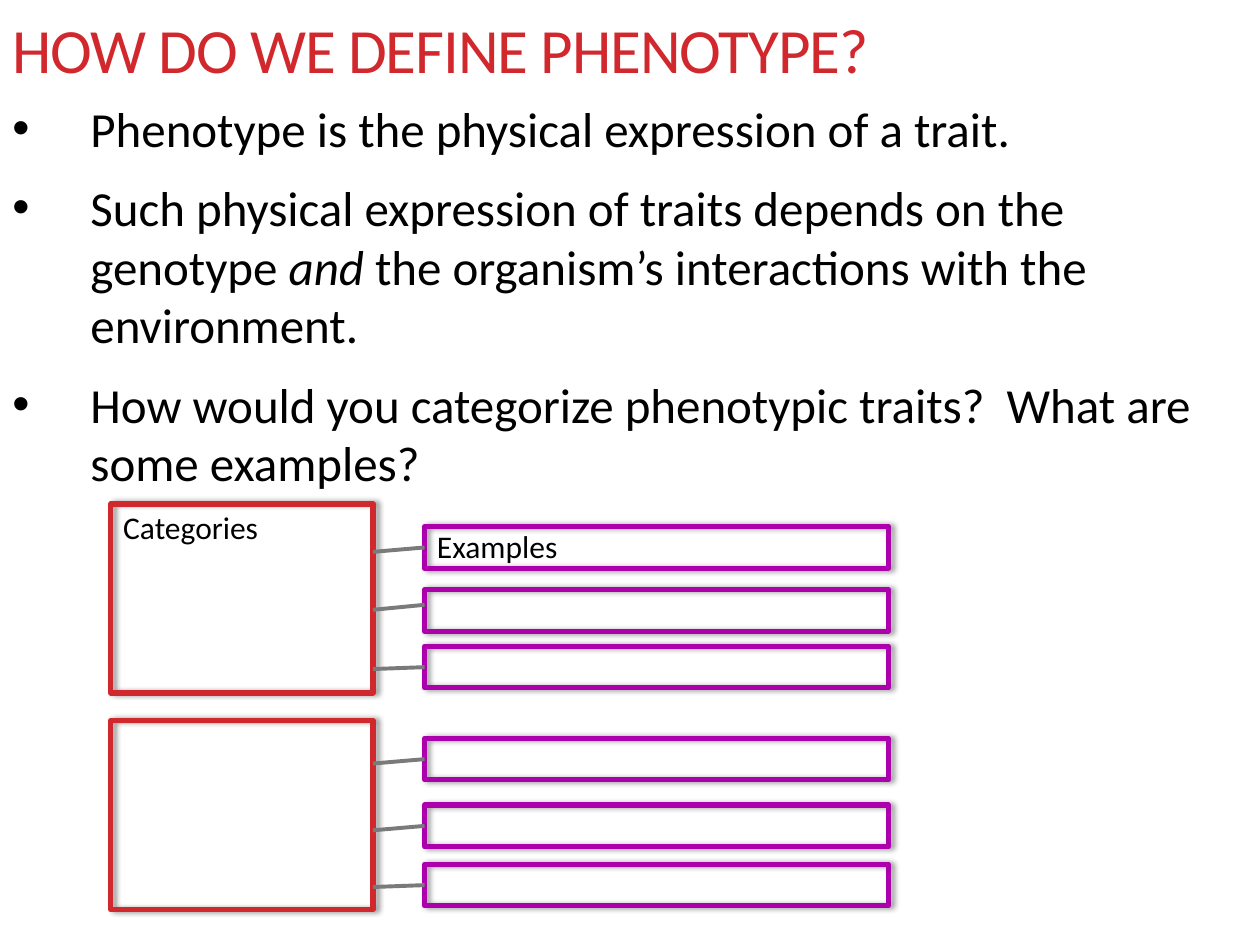
from dataclasses import dataclass

from lxml.etree import SubElement as Sub
from pptx import Presentation
from pptx.dml.color import RGBColor as Rgb
from pptx.enum.shapes import MSO_CONNECTOR as Conn, MSO_SHAPE as Kind
from pptx.enum.text import MSO_ANCHOR as Anchor
from pptx.oxml.ns import qn
from pptx.util import Pt

SCALE = 9144


@dataclass(frozen=True)
class Theme:
    font: str = "Calibri"
    red: str = "D1282E"
    plum: str = "AC00AC"
    gray: str = "7A7A7A"
    black: str = "000000"
    head: int = 36
    body: int = 28
    label: int = 18
    edge: float = 3
    link: float = 2.25


@dataclass(frozen=True)
class Box:
    left: int
    top: int
    width: int
    height: int


@dataclass(frozen=True)
class Row:
    top: int
    start: int
    end: int
    joined: bool = True


THEME = Theme()
GROUPS = [Box(88, top, 208, 150) for top in (400, 572)]
ROWS = [
    Row(418, 438, 435),
    Row(468, 484, 480, False),
    Row(513, 531, 528),
    Row(586, 606, 602),
    Row(639, 659, 656),
    Row(686, 704, 701),
]
POINTS = [
    "Phenotype is the physical expression of a trait.",
    "Such physical expression of traits depends on the genotype *and* "
    "the organism’s interactions with the environment.",
    "How would you categorize phenotypic traits?  What are some examples?",
]


def px(num: float) -> int:
    return round(num * SCALE)


def place(box: Box) -> list[int]:
    return [px(num) for num in (box.left, box.top, box.width, box.height)]


def add_text(slide, box: Box, lines: list[str], *, size: int,
             color: str = THEME.black, anchor=Anchor.TOP, wrap: bool = True,
             bullet: bool = False, track: int = 0) -> None:
    frame = slide.shapes.add_textbox(*place(box)).text_frame
    frame.word_wrap = wrap
    frame.vertical_anchor = anchor
    for num, line in enumerate(lines):
        para = frame.paragraphs[0] if num == 0 else frame.add_paragraph()
        if bullet:
            props = para._p.get_or_add_pPr()
            props.set("marL", str(px(62)))
            props.set("indent", str(-px(62)))
            Sub(props, qn("a:buFont"), typeface="Arial")
            Sub(props, qn("a:buChar"), char="•")
            para.space_after = Pt(6)
            if num:
                para.space_before = Pt(size * 0.2)
        for part, words in enumerate(line.split("*")):
            run = para.add_run()
            run.text = words
            font = run.font
            font.name, font.size = THEME.font, Pt(size)
            font.color.rgb = Rgb.from_string(color)
            if part % 2:
                font.italic = True
            if track:
                run._r.get_or_add_rPr().set("spc", str(track))


def add_frame(slide, box: Box, color: str):
    shape = slide.shapes.add_shape(Kind.RECTANGLE, *place(box))
    shape.fill.background()
    shape.line.color.rgb = Rgb.from_string(color)
    shape.line.width = Pt(THEME.edge)
    shape.shadow.inherit = False
    glow = shape._element.spPr.find(qn("a:effectLst"))
    shade = Sub(glow, qn("a:outerShdw"), blurRad=str(Pt(3.1)),
                dist=str(Pt(1.8)), dir="0", rotWithShape="0")
    tint = Sub(shade, qn("a:srgbClr"), val=THEME.black)
    Sub(tint, qn("a:alpha"), val="40000")
    return shape


def add_link(slide, row: Row, left: int, right: int, target) -> None:
    link = slide.shapes.add_connector(
        Conn.STRAIGHT, px(left), px(row.start), px(right), px(row.end))
    if row.joined:
        link.end_connect(target, 1)
    link.line.color.rgb = Rgb.from_string(THEME.gray)
    link.line.width = Pt(THEME.link)
    Sub(link._element.spPr, qn("a:effectLst"))


def main() -> None:
    deck = Presentation()
    deck.slide_width, deck.slide_height = px(1000), px(750)
    slide = deck.slides.add_slide(deck.slide_layouts[6])

    add_text(slide, Box(0, 1, 1000, 72), ["HOW DO WE DEFINE PHENOTYPE?"],
             size=THEME.head, color=THEME.red, anchor=Anchor.BOTTOM, track=-60)
    add_text(slide, Box(0, 73, 1000, 316), POINTS,
             size=THEME.body, bullet=True)

    for group in GROUPS:
        add_frame(slide, group, THEME.red)
    edge = GROUPS[0].left + GROUPS[0].width
    for row in ROWS:
        box = Box(337, row.top, 368, 33)
        target = add_frame(slide, box, THEME.plum)
        add_link(slide, row, edge, box.left, target)

    add_text(slide, Box(88, 398, 130, 40), ["Categories"],
             size=THEME.label, wrap=False)
    add_text(slide, Box(337, 413, 186, 40), ["Examples"], size=THEME.label)
    deck.save("out.pptx")


if __name__ == "__main__":
    main()
